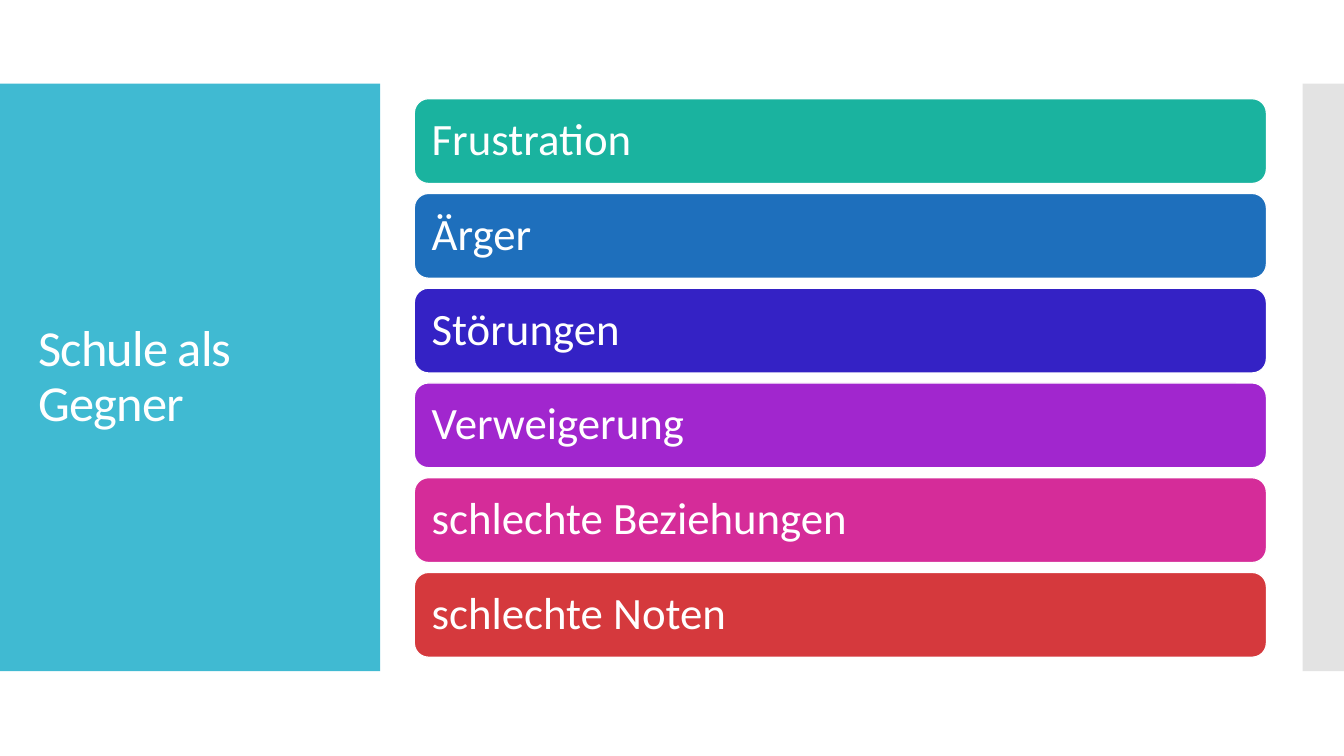
import pptx
import pptx.dml.color
import pptx.enum.shapes
import pptx.enum.text
import pptx.util
import lxml.etree
from pptx.util import Inches

THEME = {
    "font": "Calibri",
    "title_size": 36,
    "bar_size": 32,
    "text": "FFFFFF",
    "panel": "40BAD2",
    "edge": "C8C8C8",
    "bars": ["1AB39F", "1E6FBC", "3422C5", "A126CE", "D52C99", "D5393D"],
}
SHAPES = pptx.enum.shapes.MSO_SHAPE


def add_block(kind, left, top, width, height, color):
    block = page.shapes.add_shape(
        kind, Inches(left), Inches(top), Inches(width), Inches(height))
    block.shadow.inherit = False
    block.fill.solid()
    block.fill.fore_color.rgb = pptx.dml.color.RGBColor.from_string(color)
    block.line.fill.background()
    return block


def write_text(box, words, size):
    frame = box.text_frame
    frame.text = words
    frame.word_wrap = True
    frame.auto_size = pptx.enum.text.MSO_AUTO_SIZE.NONE
    frame.vertical_anchor = pptx.enum.text.MSO_ANCHOR.MIDDLE
    para = frame.paragraphs[0]
    para.alignment = pptx.enum.text.PP_ALIGN.LEFT
    para.line_spacing = 0.9
    para.font.name = THEME["font"]
    para.font.size = pptx.util.Pt(size)
    para.font.color.rgb = pptx.dml.color.RGBColor.from_string(THEME["text"])
    return para


deck = pptx.Presentation()
deck.slide_width = Inches(13.33)
deck.slide_height = Inches(7.5)
page = deck.slides.add_slide(deck.slide_layouts[5])

add_block(SHAPES.RECTANGLE, 0, 0.83, 3.77, 5.83, THEME["panel"])
edge = add_block(SHAPES.RECTANGLE, 12.92, 0.83, 0.41, 5.83, THEME["edge"])
edge_color = edge.fill._xPr.solidFill.srgbClr
alpha = lxml.etree.SubElement(edge_color, pptx.oxml.ns.qn("a:alpha"))
alpha.set("val", "50000")

title = page.shapes.title
title.left, title.top = Inches(0.28), Inches(1.23)
title.width, title.height = Inches(3.22), Inches(5.03)
title_para = write_text(title, "Schule als Gegner", THEME["title_size"])
title_para.font._rPr.set("spc", "-60")
page.shapes._spTree.append(title._element)

effects = ["Frustration", "Ärger", "Störungen", "Verweigerung",
           "schlechte Beziehungen", "schlechte Noten"]
for index, (effect, color) in enumerate(zip(effects, THEME["bars"])):
    bar = add_block(SHAPES.ROUNDED_RECTANGLE, 4.11, 0.98 + 0.94 * index, 8.45, 0.84, color)
    bar.line.color.rgb = pptx.dml.color.RGBColor.from_string(THEME["text"])
    bar.line.width = pptx.util.Pt(0.85)
    write_text(bar, effect, THEME["bar_size"])
    frame = bar.text_frame
    frame.margin_left = frame.margin_right = Inches(0.13)
    frame.margin_top = frame.margin_bottom = Inches(0.13)

deck.save("out.pptx")
